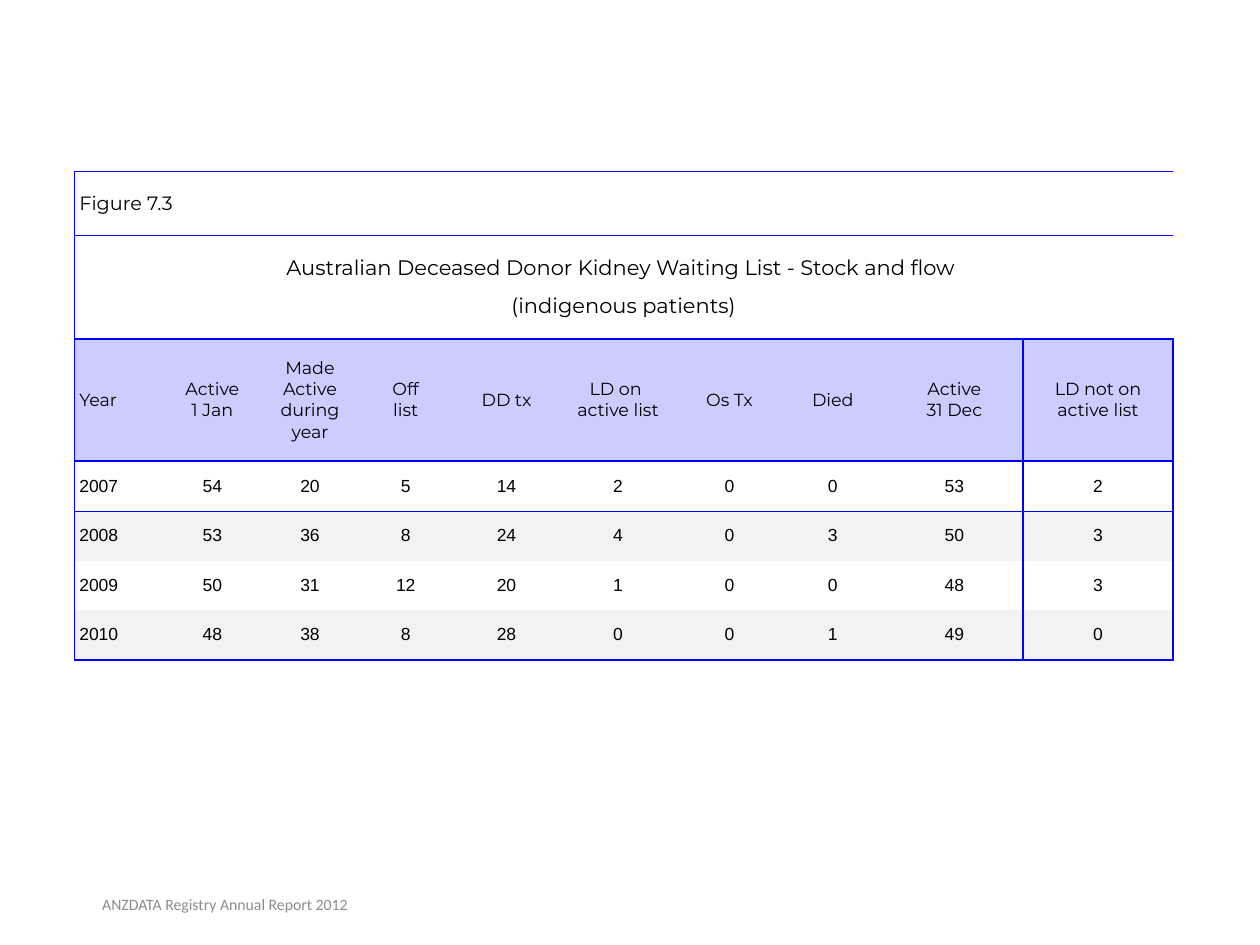
from lxml.etree import SubElement
from pptx import Presentation
from pptx.dml.color import RGBColor
from pptx.enum.text import MSO_ANCHOR, PP_ALIGN
from pptx.oxml.ns import qn
from pptx.util import Inches, Pt

CAPTION = "Figure 7.3"
TITLE = ("Australian Deceased Donor Kidney Waiting List - Stock and flow \n"
         "(indigenous patients)")
# "\n" starts a paragraph, "\v" breaks a line
HEADERS = ["Year", "Active\n1 Jan", "Made\nActive during year", "Off\nlist", "DD tx",
           "LD on \vactive list", "Os Tx", "Died", "Active\n31 Dec",
           "LD not on\nactive list"]
FLOWS = [
    (2007, 54, 20, 5, 14, 2, 0, 0, 53, 2),
    (2008, 53, 36, 8, 24, 4, 0, 3, 50, 3),
    (2009, 50, 31, 12, 20, 1, 0, 0, 48, 3),
    (2010, 48, 38, 8, 28, 0, 0, 1, 49, 0),
]
FOOTER = "ANZDATA Registry Annual Report 2012"

COL_WIDTHS = [0.68, 0.83, 0.72, 0.8, 0.8, 0.97, 0.8, 0.84, 1.09, 1.19]
ROW_HEIGHTS = [0.51, 0.82, 0.97, 0.4, 0.39, 0.39, 0.4]
HEADER_ROW = 2
LAST_ROW, LAST_COL = len(ROW_HEIGHTS) - 1, len(COL_WIDTHS) - 1
NO_STYLE = "{2D5ABB26-0587-4C30-8999-92F81FD0307C}"
BORDER = "0000FF"


def rgb(value):
    return RGBColor.from_string(value)


def style(tf, font, size, color="000000", align=PP_ALIGN.CENTER):
    for p in tf.paragraphs:
        p.alignment = align
        p.font.name, p.font.size = font, Pt(size)
        p.font.color.rgb = rgb(color)


def add_borders(cell, row, col):
    """Frame the table, rule off the top rows and set the last column apart."""
    sides = {
        "a:lnL": col in (0, LAST_COL),
        "a:lnR": col >= LAST_COL - 1,
        "a:lnT": row <= HEADER_ROW + 1,
        "a:lnB": row <= HEADER_ROW or row == LAST_ROW,
    }
    tc_pr = cell._tc.get_or_add_tcPr()
    for tag, drawn in sides.items():
        if drawn:
            ln = SubElement(tc_pr, qn(tag), w=str(Pt(1)))
            SubElement(SubElement(ln, qn("a:solidFill")), qn("a:srgbClr"), val=BORDER)


def fill_cell(cell, row, col, text):
    cell.text = str(text)
    cell.vertical_anchor = MSO_ANCHOR.MIDDLE
    cell.margin_left = cell.margin_right = Inches(0.04)
    cell.margin_top = cell.margin_bottom = Inches(0.04)
    add_borders(cell, row, col)
    if row < HEADER_ROW:
        fill, font, size = "FFFFFF", "Montserrat", 11 + row
    elif row == HEADER_ROW:
        fill, font, size = "CCCCFF", "Montserrat", 10
    else:
        fill, font, size = ("FFFFFF", "F2F2F2")[(row - HEADER_ROW - 1) % 2], "Arial", 10
    cell.fill.solid()
    cell.fill.fore_color.rgb = rgb(fill)
    left = col == 0 and row != 1
    style(cell.text_frame, font, size, align=PP_ALIGN.LEFT if left else PP_ALIGN.CENTER)


def add_waiting_list(s):
    frame = s.shapes.add_table(len(ROW_HEIGHTS), len(COL_WIDTHS), Inches(0.59), Inches(1.36),
                               Inches(sum(COL_WIDTHS)), Inches(sum(ROW_HEIGHTS)))
    table = frame.table
    table.first_row = table.horz_banding = False
    table._tbl.tblPr.find(qn("a:tableStyleId")).text = NO_STYLE
    for column, width in zip(table.columns, COL_WIDTHS):
        column.width = Inches(width)
    for row, height in zip(table.rows, ROW_HEIGHTS):
        row.height = Inches(height)

    blanks = [""] * LAST_COL
    for r, values in enumerate([[CAPTION] + blanks, [TITLE] + blanks, HEADERS] + FLOWS):
        for c, value in enumerate(values):
            fill_cell(table.cell(r, c), r, c, value)
    for r in range(HEADER_ROW):
        table.cell(r, 0).merge(table.cell(r, LAST_COL))

    title = table.cell(1, 0)
    title.margin_left = title.margin_right = Inches(0.39)
    title.margin_top = title.margin_bottom = Inches(0.02)
    first, second = title.text_frame.paragraphs
    first.space_after, second.space_before = Pt(2.7), Pt(4.5)


def add_footer(s):
    tf = s.shapes.add_textbox(Inches(0.2), Inches(6.98), Inches(3.17), Inches(0.4)).text_frame
    tf.word_wrap = True
    tf.vertical_anchor = MSO_ANCHOR.MIDDLE
    tf.text = FOOTER
    style(tf, "Calibri", 9, "8C8C8C")


def main():
    prs = Presentation()
    prs.slide_width, prs.slide_height = Inches(10), Inches(7.5)
    s = prs.slides.add_slide(prs.slide_layouts[6])
    add_waiting_list(s)
    add_footer(s)
    prs.save("out.pptx")


if __name__ == "__main__":
    main()
